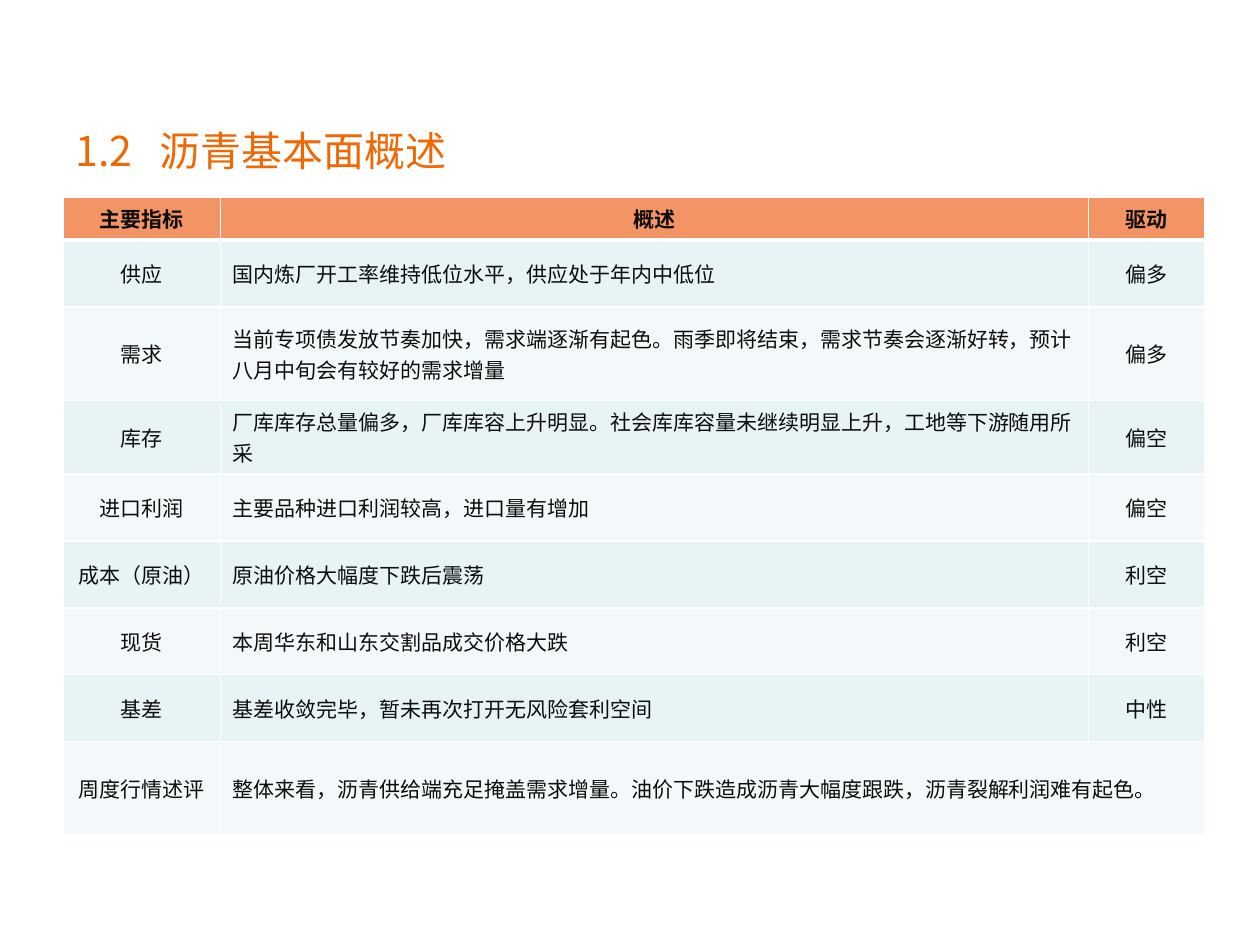
from dataclasses import dataclass

from lxml import etree
from pptx import Presentation
from pptx.dml.color import RGBColor
from pptx.enum.text import MSO_ANCHOR, MSO_AUTO_SIZE, PP_ALIGN
from pptx.oxml.ns import qn
from pptx.util import Cm, Pt

MIDDLE = MSO_ANCHOR.MIDDLE
NO_FIT = MSO_AUTO_SIZE.NONE
LEFT, CENTER = PP_ALIGN.LEFT, PP_ALIGN.CENTER
TITLE_ONLY = 5


@dataclass(frozen=True)
class Theme:
    font: str = "Noto Sans CJK SC"
    title_size: float = 23.4
    body_size: float = 12
    title: str = "EF6803"
    text: str = "0D0D0D"
    header: str = "F39464"
    bands: tuple = ("E7F3F4", "F3F9FA")
    border: str = "FFFFFF"


THEME = Theme()
TITLE = "1.2\t沥青基本面概述"
COLUMN_WIDTHS = (3.17, 17.5, 2.34)
HEADER_HEIGHT, ROW_HEIGHT, TALL_HEIGHT = 0.82, 1.35, 1.88
TALL_ROWS = ("需求", "周度行情述评")
ROWS = (
    ("主要指标", "概述", "驱动"),
    ("供应", "国内炼厂开工率维持低位水平，供应处于年内中低位", "偏多"),
    ("需求", "当前专项债发放节奏加快，需求端逐渐有起色。雨季即将结束，"
     "需求节奏会逐渐好转，预计八月中旬会有较好的需求增量", "偏多"),
    ("库存", "厂库库存总量偏多，厂库库容上升明显。社会库库容量未继续明显上升，"
     "工地等下游随用所采", "偏空"),
    ("进口利润", "主要品种进口利润较高，进口量有增加", "偏空"),
    ("成本（原油）", "原油价格大幅度下跌后震荡", "利空"),
    ("现货", "本周华东和山东交割品成交价格大跌", "利空"),
    ("基差", "基差收敛完毕，暂未再次打开无风险套利空间", "中性"),
    ("周度行情述评", "整体来看，沥青供给端充足掩盖需求增量。"
     "油价下跌造成沥青大幅度跟跌，沥青裂解利润难有起色。"),
)


def apply(target, values):
    for name, value in values.items():
        setattr(target, name, value)


def write(para, text, size, color, bold=False):
    span = para.add_run()
    span.text = text
    apply(span.font, {"name": THEME.font, "size": Pt(size), "bold": bold})
    span.font.color.rgb = RGBColor.from_string(color)
    properties = span.font._element
    etree.SubElement(properties, qn("a:ea"), typeface=THEME.font)


def add_tab_stop(para, position):
    tabs = etree.SubElement(para._p.get_or_add_pPr(), qn("a:tabLst"))
    etree.SubElement(tabs, qn("a:tab"), pos=str(position), algn="l")


def add_title(slide):
    box = slide.shapes.title
    apply(box, {"left": Cm(1.27), "top": Cm(2.41),
                "width": Cm(22.86), "height": Cm(1.22)})
    apply(box.text_frame, {"word_wrap": True, "auto_size": NO_FIT,
                           "vertical_anchor": MIDDLE})
    para = box.text_frame.paragraphs[0]
    add_tab_stop(para, Cm(1.7))
    para.alignment = LEFT
    write(para, TITLE, THEME.title_size, THEME.title)


def add_borders(cell, bottom):
    properties = cell._tc.get_or_add_tcPr()
    for side, width in (("L", 1), ("R", 1), ("T", 1), ("B", bottom)):
        line = etree.SubElement(properties, qn(f"a:ln{side}"), w=str(Pt(width)))
        fill = etree.SubElement(line, qn("a:solidFill"))
        etree.SubElement(fill, qn("a:srgbClr"), val=THEME.border)


def format_cell(cell, row, column):
    is_header = row == 0
    add_borders(cell, 3 if is_header else 1)
    cell.fill.solid()
    color = THEME.header if is_header else THEME.bands[(row - 1) % 2]
    cell.fill.fore_color.rgb = RGBColor.from_string(color)
    cell.vertical_anchor = MIDDLE
    para = cell.text_frame.paragraphs[0]
    para.alignment = LEFT if column == 1 and not is_header else CENTER
    if column < len(ROWS[row]):
        write(para, ROWS[row][column], THEME.body_size, THEME.text, is_header)


def row_height(row):
    if row == 0:
        return HEADER_HEIGHT
    return TALL_HEIGHT if ROWS[row][0] in TALL_ROWS else ROW_HEIGHT


def add_indicator_table(slide):
    heights = [row_height(row) for row in range(len(ROWS))]
    table = slide.shapes.add_table(
        len(ROWS), len(COLUMN_WIDTHS), Cm(1.27), Cm(3.97),
        Cm(sum(COLUMN_WIDTHS)), Cm(sum(heights))).table
    for column, width in zip(table.columns, COLUMN_WIDTHS):
        column.width = Cm(width)
    for row, height in enumerate(heights):
        table.rows[row].height = Cm(height)
        for column in range(len(COLUMN_WIDTHS)):
            format_cell(table.cell(row, column), row, column)
    last = len(ROWS) - 1
    table.cell(last, 1).merge(table.cell(last, 2))


def main():
    deck = Presentation()
    apply(deck, {"slide_width": Cm(25.4), "slide_height": Cm(19.05)})
    slide = deck.slides.add_slide(deck.slide_layouts[TITLE_ONLY])
    add_indicator_table(slide)
    add_title(slide)
    deck.save("out.pptx")


if __name__ == "__main__":
    main()
